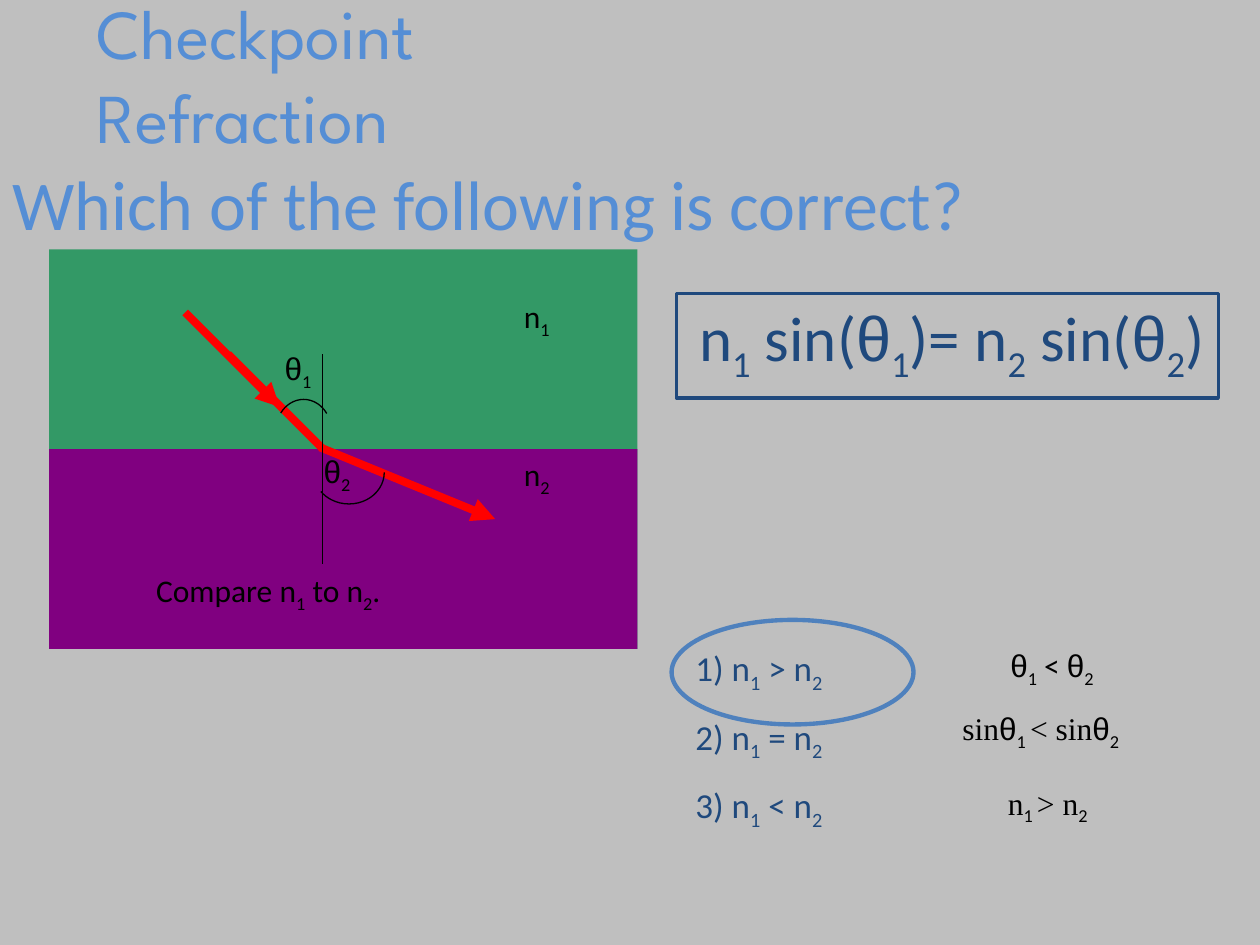
import itertools

import pptx
import pptx.dml.color
import pptx.enum.shapes
import pptx.enum.text
import pptx.oxml.ns
import pptx.util
from lxml import etree
from pptx.util import Inches

COLORS = {
    "background": "BFBFBF",
    "title": "558ED5",
    "navy": "1F497D",
    "ellipse": "4F81BD",
    "upper": "339966",
    "lower": "800080",
    "ray": "FF0000",
    "black": "000000",
}
SHAPES = pptx.enum.shapes.MSO_SHAPE


def rgb(name):
    return pptx.dml.color.RGBColor.from_string(COLORS[name])


def add_runs(paragraph, text, font_name):
    """Write text where _x_ marks a subscript and each theta is in Arial."""
    for index, piece in enumerate(text.split("_")):
        subscript = index % 2 == 1
        for is_theta, letters in itertools.groupby(piece, lambda letter: letter == "θ"):
            run = paragraph.add_run()
            run.text = "".join(letters)
            if is_theta:
                run.font.name = "Arial"
            elif subscript:
                run.font.name = "Calibri"
                run._r.get_or_add_rPr().set("baseline", "-25000")
            else:
                run.font.name = font_name


def add_text(shapes, box, lines, size=18, color="black", font_name="Calibri",
             middle=False, gap=0):
    shape = shapes.add_textbox(*map(Inches, box))
    frame = shape.text_frame
    frame.word_wrap = True
    if middle:
        frame.vertical_anchor = pptx.enum.text.MSO_ANCHOR.MIDDLE
    for index, line in enumerate(lines):
        paragraph = frame.add_paragraph() if index else frame.paragraphs[0]
        paragraph.font.size = pptx.util.Pt(size)
        paragraph.font.color.rgb = rgb(color)
        paragraph.font.name = font_name
        if index:
            paragraph.space_before = pptx.util.Pt(gap)
        add_runs(paragraph, line, font_name)
    return shape


def add_shape(shapes, kind, box, fill=None, line=None, width=1):
    shape = shapes.add_shape(kind, *map(Inches, box))
    shape.shadow.inherit = False
    if fill:
        shape.fill.solid()
        shape.fill.fore_color.rgb = rgb(fill)
    else:
        shape.fill.background()
    if line:
        shape.line.color.rgb = rgb(line)
        shape.line.width = pptx.util.Pt(width)
    else:
        shape.line.fill.background()
    return shape


def add_line(shapes, start, end, color, width, arrow=False):
    connector = shapes.add_connector(
        pptx.enum.shapes.MSO_CONNECTOR.STRAIGHT, *map(Inches, start + end))
    connector.line.color.rgb = rgb(color)
    connector.line.width = pptx.util.Pt(width)
    if arrow:
        tail = etree.SubElement(connector.line._get_or_add_ln(),
                                pptx.oxml.ns.qn("a:tailEnd"))
        tail.set("type", "triangle")
    etree.SubElement(connector._element.spPr, pptx.oxml.ns.qn("a:effectLst"))


def add_arc(shapes, center, radii, start_angle, end_angle):
    (x, y), (rx, ry) = center, radii
    arc = add_shape(shapes, SHAPES.ARC, (x - rx, y - ry, 2 * rx, 2 * ry),
                    line="black", width=0.75)
    # Angles are stored in 60000ths of a degree, adjustments in 100000ths
    arc.adjustments[0] = start_angle * 0.6
    arc.adjustments[1] = end_angle * 0.6


def add_headings(slide, left, top):
    add_text(slide.shapes, (left, top + 0.98, 9, 1.25),
             ["Which of the following is correct?"], 40, "title", middle=True)
    add_text(slide.shapes, (left + 0.67, top, 8.75, 1.17),
             ["Checkpoint\vRefraction".split("\v")[0]], 40, "title",
             "League Spartan", middle=True)
    paragraph = slide.shapes[-1].text_frame.paragraphs[0]
    paragraph.add_line_break()
    add_runs(paragraph, "Refraction", "League Spartan")


def add_refraction_diagram(slide, left, top, width, height):
    shapes = slide.shapes.add_group_shape().shapes

    def at(x, y):
        return left + x, top + y

    # Two media
    add_shape(shapes, SHAPES.RECTANGLE, (left, top, width, height), "upper")
    add_shape(shapes, SHAPES.RECTANGLE,
              (left, top + height / 2, width, height / 2), "lower")

    # Incoming and refracted ray
    add_line(shapes, at(1.08, 0.5), at(1.83, 1.25), "ray", 4.5, arrow=True)
    add_line(shapes, at(1.42, 0.83), at(2.17, 1.58), "ray", 4.5)
    add_line(shapes, at(2.15, 1.57), at(3.54, 2.14), "ray", 4.5, arrow=True)

    # Normal and angle arcs
    add_line(shapes, at(2.17, 0.83), at(2.17, 2.5), "black", 0.75)
    add_arc(shapes, at(2.02, 1.44), (0.22, 0.25), 218, 323)
    add_arc(shapes, at(2.38, 1.77), (0.28, 0.25), 0, 146)

    # Labels
    for x, y, label_width, label in [
        (3.67, 0.33, 1, "n_1_"),
        (3.67, 1.58, 1, "n_2_"),
        (1.77, 0.74, 0.75, "θ_1_"),
        (2.08, 1.56, 0.75, "θ_2_"),
        (0.75, 2.5, 3.42, "Compare n_1_ to n_2_."),
    ]:
        add_text(shapes, (*at(x, y), label_width, 0.5), [label])


def add_formula(slide, left, top, width, height):
    add_text(slide.shapes, (left + 0.08, top - 0.01, width + 0.2, 0.71),
             ["n_1_ sin(θ_1_)= n_2_ sin(θ_2_)"], 36, "navy")
    add_shape(slide.shapes, SHAPES.RECTANGLE, (left, top, width, height),
              line="navy", width=2)


def add_answers(slide, left, top):
    # Choices, with the right one circled
    choices = [f"{number}) n_1_ {sign} n_2_" for number, sign in enumerate(">=<", 1)]
    add_text(slide.shapes, (left + 0.09, top + 0.16, 2.08, 1.45), choices,
             20, "navy", gap=12)
    add_shape(slide.shapes, SHAPES.OVAL, (left, top, 1.92, 0.83),
              line="ellipse", width=2.5)

    # Reasoning
    for x, y, width, text, font_name in [
        (2.59, 0.16, 1.33, "θ_1_ < θ_2_", "Calibri"),
        (2.21, 0.66, 2.46, "sinθ_1 _< sinθ_2_", "Times New Roman"),
        (2.57, 1.25, 1.38, "n_1 _> n_2_", "Times New Roman"),
    ]:
        add_text(slide.shapes, (left + x, top + y, width, 0.5), [text],
                 font_name=font_name)


def main():
    presentation = pptx.Presentation()
    presentation.slide_width = Inches(10)
    presentation.slide_height = Inches(7.5)
    slide = presentation.slides.add_slide(presentation.slide_layouts[6])
    slide.background.fill.solid()
    slide.background.fill.fore_color.rgb = rgb("background")

    add_refraction_diagram(slide, 0.39, 1.98, 4.67, 3.17)
    add_answers(slide, 5.33, 4.92)
    add_formula(slide, 5.37, 2.33, 4.3, 0.83)
    add_headings(slide, 0, 0)
    presentation.save("out.pptx")


if __name__ == "__main__":
    main()
